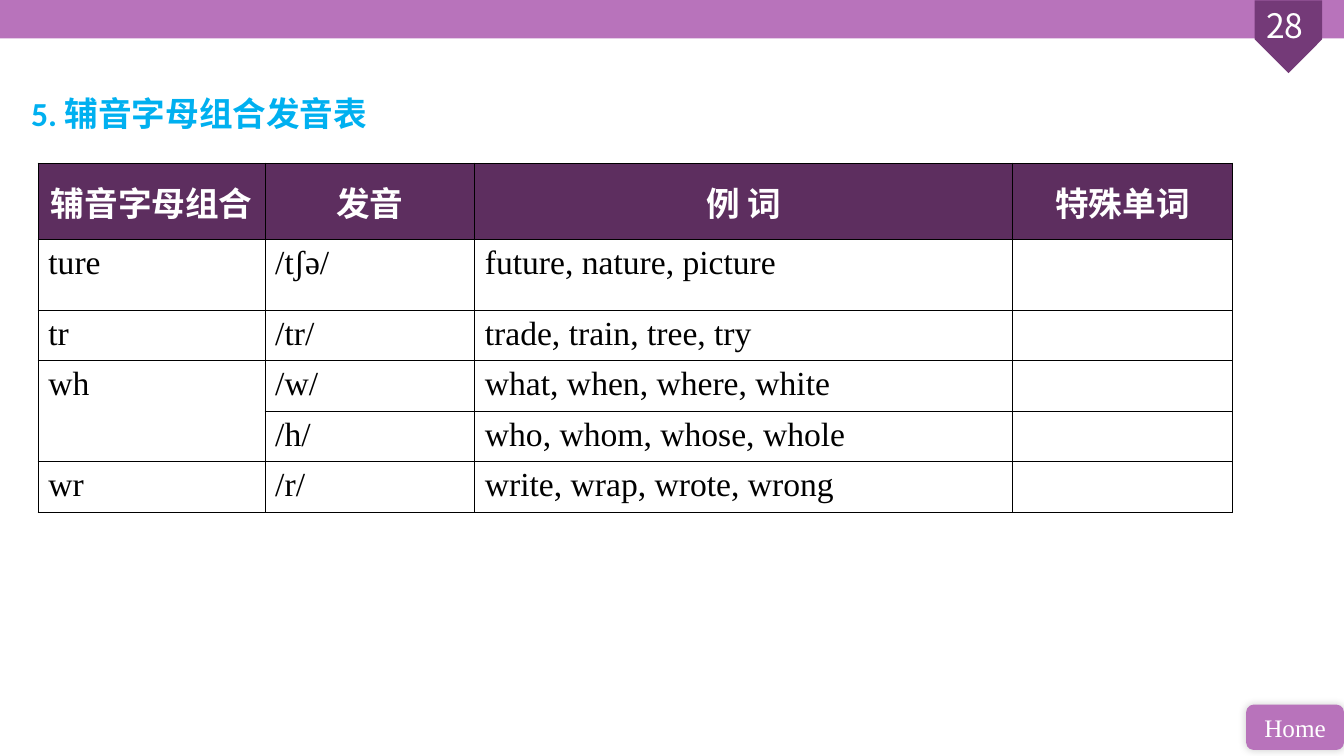
"""Build a slide with a table of consonant letter combinations and their sounds."""
from dataclasses import dataclass
from typing import Any, Optional

import lxml.etree
import pptx
import pptx.dml.color
import pptx.enum.shapes
import pptx.enum.text
import pptx.oxml
import pptx.oxml.ns
import pptx.util

Shapes = pptx.enum.shapes.MSO_SHAPE
Align = pptx.enum.text.PP_ALIGN
Anchor = pptx.enum.text.MSO_ANCHOR


@dataclass(frozen=True)
class Theme:
    orchid: str = "B873BB"
    plum: str = "743A78"
    header: str = "5D2E5F"
    sky: str = "00B0F0"
    white: str = "FFFFFF"
    black: str = "000000"
    serif: str = "Times New Roman"
    sans: str = "Calibri"
    chinese: str = "Noto Sans CJK SC"
    large: int = 24
    small: int = 18
    border: int = 1


@dataclass(frozen=True)
class Area:
    """Position and size in percent of the slide's width and height."""
    left: float
    top: float
    width: float
    height: float


@dataclass(frozen=True)
class Style:
    font: str
    size: int
    color: str
    bold: bool = False
    align: Any = Align.LEFT


@dataclass(frozen=True)
class Block:
    area: Area
    preset: Optional[Any] = None
    fill: str = ""
    text: str = ""
    style: Optional[Style] = None
    rotation: int = 0
    glow: bool = False


THEME = Theme()
SLIDE_WIDTH = pptx.util.Inches(13.33)
SLIDE_HEIGHT = pptx.util.Inches(7.5)

NUMBER = Style(THEME.chinese, THEME.large, THEME.white, align=Align.CENTER)
BUTTON = Style(THEME.serif, THEME.small, THEME.white, align=Align.CENTER)
HEADING = Style(THEME.sans, THEME.large, THEME.sky, bold=True)
HEADER = Style(THEME.serif, THEME.large, THEME.white, bold=True, align=Align.CENTER)
BODY = Style(THEME.serif, THEME.large, THEME.black)

BLOCKS = [
    Block(Area(0, 0, 100, 5.07), Shapes.RECTANGLE, THEME.orchid),
    Block(Area(93.17, 0.4, 5.4, 8.93), Shapes.PENTAGON, THEME.plum, rotation=90),
    Block(Area(92.2, 0, 7.35, 6.67), text="28 ", style=NUMBER),
    Block(Area(92.72, 93.2, 7.28, 6), Shapes.ROUNDED_RECTANGLE, THEME.orchid,
          "Home", BUTTON, glow=True),
    Block(Area(1.58, 11.6, 92.05, 6.67), text="5. 辅音字母组合发音表", style=HEADING),
]

TABLE_LEFT, TABLE_TOP = 2.85, 21.6
COLUMNS = [16.88, 15.6, 39.98, 16.43]
ROWS = [10.13, 9.33] + [6.67] * 4
SOUNDS = [
    ["辅音字母组合", "发音", "例 词", "特殊单词"],
    ["ture", "/tʃə/", "future, nature, picture", ""],
    ["tr", "/tr/", "trade, train, tree, try", ""],
    ["wh", "/w/", "what, when, where, white", ""],
    ["", "/h/", "who, whom, whose, whole", ""],
    ["wr", "/r/", "write, wrap, wrote, wrong", ""],
]


def across(share: float) -> int:
    return round(SLIDE_WIDTH * share / 100)


def down(share: float) -> int:
    return round(SLIDE_HEIGHT * share / 100)


def place(area: Area) -> tuple[int, int, int, int]:
    return across(area.left), down(area.top), across(area.width), down(area.height)


def rgb(color: str) -> pptx.dml.color.RGBColor:
    return pptx.dml.color.RGBColor.from_string(color)


def write(frame: Any, text: str, style: Style) -> None:
    frame.text = text
    para = frame.paragraphs[0]
    para.alignment = style.align
    for span in para.runs:
        span.font.name = style.font
        span.font.size = pptx.util.Pt(style.size)
        span.font.bold = style.bold
        span.font.color.rgb = rgb(style.color)
        east = lxml.etree.Element(pptx.oxml.ns.qn("a:ea"), typeface=THEME.chinese)
        span.font._element.find(pptx.oxml.ns.qn("a:latin")).addnext(east)


def add_glow(box: Any) -> None:
    effects = box._element.spPr.find(pptx.oxml.ns.qn("a:effectLst"))
    effects.append(pptx.oxml.parse_xml(
        f'<a:outerShdw {pptx.oxml.ns.nsdecls("a")} blurRad="{pptx.util.Pt(6)}" '
        f'dist="0" dir="18900000"><a:srgbClr val="{THEME.black}">'
        '<a:alpha val="20000"/></a:srgbClr></a:outerShdw>'))


def draw_block(page: Any, block: Block) -> None:
    if block.preset is None:
        box = page.shapes.add_textbox(*place(block.area))
    else:
        box = page.shapes.add_shape(block.preset, *place(block.area))
        box.shadow.inherit = False
        box.fill.solid()
        box.fill.fore_color.rgb = rgb(block.fill)
        box.line.fill.background()
        box.rotation = block.rotation
        box.text_frame.vertical_anchor = Anchor.MIDDLE
    if block.glow:
        add_glow(box)
    if block.style:
        box.text_frame.word_wrap = True
        write(box.text_frame, block.text, block.style)


def add_borders(cell: Any) -> None:
    properties = cell._tc.get_or_add_tcPr()
    for side in ("lnL", "lnR", "lnT", "lnB"):
        properties.append(pptx.oxml.parse_xml(
            f'<a:{side} {pptx.oxml.ns.nsdecls("a")} w="{pptx.util.Pt(THEME.border)}">'
            f'<a:solidFill><a:srgbClr val="{THEME.black}"/></a:solidFill></a:{side}>'))


def draw_table(page: Any) -> None:
    area = Area(TABLE_LEFT, TABLE_TOP, sum(COLUMNS), sum(ROWS))
    table = page.shapes.add_table(len(ROWS), len(COLUMNS), *place(area)).table
    table.first_row = table.horz_banding = False
    for column, width in zip(table.columns, COLUMNS):
        column.width = across(width)
    for row, height in zip(table.rows, ROWS):
        row.height = down(height)
    for row_index, texts in enumerate(SOUNDS):
        for column_index, text in enumerate(texts):
            cell = table.cell(row_index, column_index)
            add_borders(cell)
            if row_index == 0:
                cell.fill.solid()
                cell.fill.fore_color.rgb = rgb(THEME.header)
                cell.vertical_anchor = Anchor.MIDDLE
            else:
                cell.fill.background()
            write(cell.text_frame, text, BODY if row_index else HEADER)
    table.cell(3, 0).merge(table.cell(4, 0))


def main() -> None:
    deck = pptx.Presentation()
    deck.slide_width, deck.slide_height = SLIDE_WIDTH, SLIDE_HEIGHT
    page = deck.slides.add_slide(deck.slide_layouts[6])
    for block in BLOCKS:
        draw_block(page, block)
    draw_table(page)
    deck.save("out.pptx")


if __name__ == "__main__":
    main()
